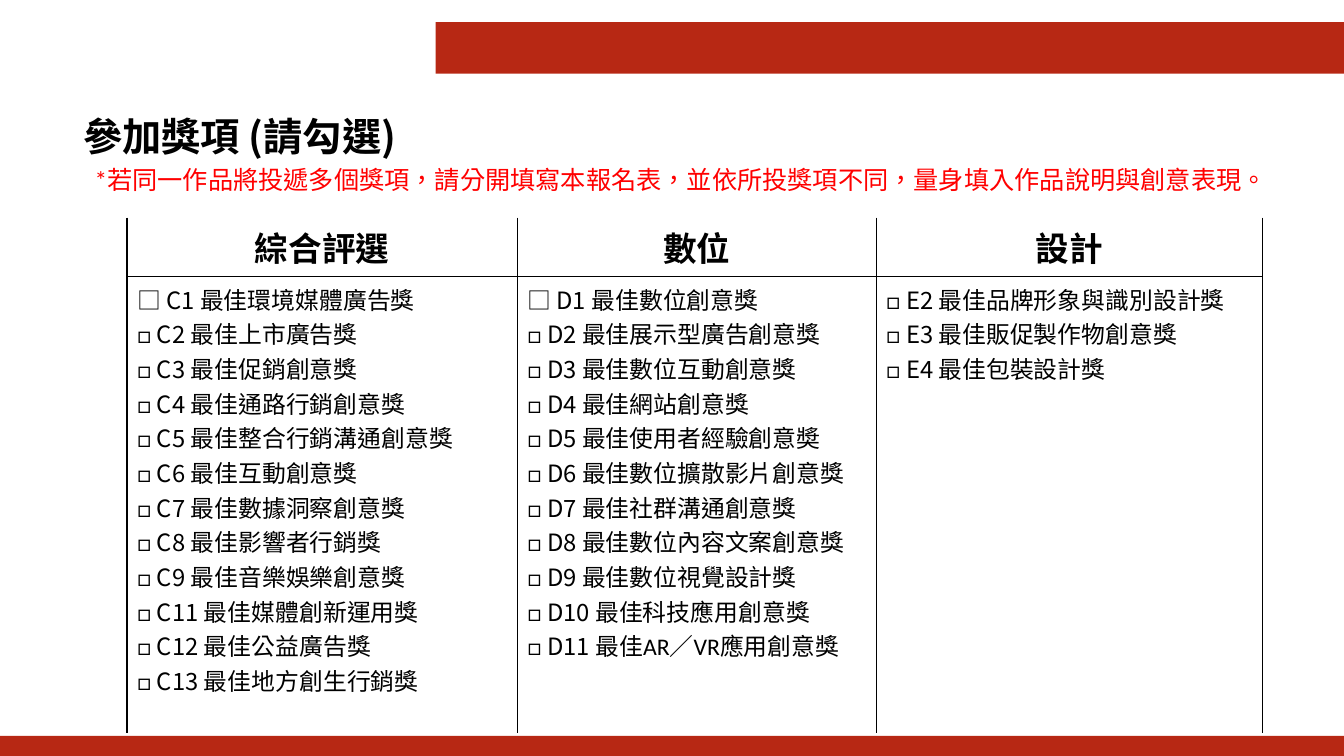
from dataclasses import dataclass

from lxml.etree import SubElement
from pptx import Presentation
from pptx.dml.color import RGBColor
from pptx.enum.lang import MSO_LANGUAGE_ID as Language
from pptx.enum.shapes import MSO_SHAPE as Shape
from pptx.enum.text import MSO_ANCHOR as Anchor, MSO_AUTO_SIZE as AutoSize, PP_ALIGN as Align
from pptx.oxml.ns import qn
from pptx.util import Pt

PX = 9144
NBSP = " "


@dataclass(frozen=True)
class Theme:
    """Colours, fonts and type sizes of the entry form."""
    bar: str = "B72814"
    ink: str = "000000"
    warning: str = "FF0000"
    text_font: str = "Calibri"
    code_font: str = "Noto Sans CJK SC"
    title: int = 28
    heading: int = 24
    note: int = 18
    award: int = 17
    rule: int = 1


THEME = Theme()

CATEGORIES = [
    ("綜合評選", 387, "C1", [
        ("C1", "最佳環境媒體廣告獎"),
        ("C2", "最佳上市廣告獎"),
        ("C3", "最佳促銷創意獎"),
        ("C4", "最佳通路行銷創意獎"),
        ("C5", "最佳整合行銷溝通創意獎"),
        ("C6", "最佳互動創意獎"),
        ("C7", "最佳數據洞察創意獎"),
        ("C8", "最佳影響者行銷獎"),
        ("C9", "最佳音樂娛樂創意獎"),
        ("C11", "最佳媒體創新運用獎"),
        ("C12", "最佳公益廣告獎"),
        ("C13", "最佳地方創生行銷獎"),
    ]),
    ("數位", 356, "D1", [
        ("D1", "最佳數位創意獎"),
        ("D2", "最佳展示型廣告創意獎"),
        ("D3", "最佳數位互動創意獎"),
        ("D4", "最佳網站創意獎"),
        ("D5", "最佳使用者經驗創意奬"),
        ("D6", "最佳數位擴散影片創意獎"),
        ("D7", "最佳社群溝通創意獎"),
        ("D8", "最佳數位內容文案創意獎"),
        ("D9", "最佳數位視覺設計獎"),
        ("D10", "最佳科技應用創意獎"),
        ("D11", "最佳AR／VR應用創意獎"),
    ]),
    ("設計", 383, None, [
        ("E2", "最佳品牌形象與識別設計獎"),
        ("E3", "最佳販促製作物創意獎"),
        ("E4", "最佳包裝設計獎"),
    ]),
]


def scaled(box):
    """Turn a box in px into EMU."""
    return [length * PX for length in box]


def add_span(para, text, size, font=THEME.text_font, color=THEME.ink, bold=False):
    """Add one run of text to a paragraph."""
    span = para.add_run()
    span.text = text
    span.font.name = font
    span.font.size = Pt(size)
    span.font.bold = bold
    span.font.color.rgb = RGBColor.from_string(color)
    span.font.language_id = Language.TRADITIONAL_CHINESE


def add_bar(page, box):
    """Draw one plain red bar."""
    bar = page.shapes.add_shape(Shape.RECTANGLE, *scaled(box))
    bar.shadow.inherit = False
    bar.fill.solid()
    bar.fill.fore_color.rgb = RGBColor.from_string(THEME.bar)
    bar.line.fill.background()


def add_text_line(page, box):
    """Add a text box and return its only paragraph."""
    frame = page.shapes.add_textbox(*scaled(box)).text_frame
    frame.word_wrap = True
    frame.auto_size = AutoSize.SHAPE_TO_FIT_TEXT
    return frame.paragraphs[0]


def add_title(page, box):
    """Write the bold page title."""
    para = add_text_line(page, box)
    for text, font in (
        ("參加獎項" + NBSP, THEME.text_font),
        ("(", THEME.code_font),
        ("請勾選", THEME.text_font),
        (")", THEME.code_font),
    ):
        add_span(para, text, THEME.title, font, bold=True)


def add_note(page, box):
    """Write the red instruction below the title."""
    text = "*若同一作品將投遞多個獎項，請分開填寫本報名表，並依所投獎項不同，量身填入作品說明與創意表現。"
    add_span(add_text_line(page, box), text, THEME.note, color=THEME.warning)


def set_borders(cell, ruled):
    """Rule the named sides of a cell and clear the others."""
    properties = cell._tc.get_or_add_tcPr()
    for side in "LRTB":
        line = SubElement(properties, qn(f"a:ln{side}"), w=str(Pt(THEME.rule)))
        if side in ruled:
            fill = SubElement(line, qn("a:solidFill"))
            SubElement(fill, qn("a:srgbClr"), val=THEME.ink)
        else:
            SubElement(line, qn("a:noFill"))


def fill_heading(cell, heading):
    """Write a category name in its heading cell."""
    set_borders(cell, "LRB")
    cell.fill.background()
    cell.vertical_anchor = Anchor.MIDDLE
    para = cell.text_frame.paragraphs[0]
    para.alignment = Align.CENTER
    add_span(para, heading, THEME.heading, bold=True)


def fill_awards(cell, awards, wide_box):
    """List the awards of a category, each with its tick box."""
    set_borders(cell, "LRT")
    cell.fill.background()
    frame = cell.text_frame
    for index, (code, award) in enumerate(awards):
        para = frame.add_paragraph() if index else frame.paragraphs[0]
        if code == wide_box:
            add_span(para, f"□ {code}{NBSP}", THEME.award, THEME.code_font)
        else:
            add_span(para, "□" + NBSP, THEME.award)
            add_span(para, code + NBSP, THEME.award, THEME.code_font)
        add_span(para, award, THEME.award)


def add_award_table(page, box, heading_height):
    """Build the table with one column for each category."""
    table = page.shapes.add_table(2, len(CATEGORIES), *scaled(box)).table
    table.first_row = False
    table.horz_banding = False
    table.rows[0].height = heading_height * PX
    table.rows[1].height = (box[3] - heading_height) * PX
    for column, (heading, width, wide_box, awards) in enumerate(CATEGORIES):
        table.columns[column].width = width * PX
        fill_heading(table.cell(0, column), heading)
        fill_awards(table.cell(1, column), awards, wide_box)


def main():
    """Build the award selection page."""
    deck = Presentation()
    deck.slide_width, deck.slide_height = scaled((1333, 750))
    page = deck.slides.add_slide(deck.slide_layouts[6])
    add_bar(page, (432, 22, 901, 51))
    add_bar(page, (0, 730, 1333, 20))
    add_award_table(page, (126, 216, 1126, 511), 58)
    add_title(page, (73, 107, 837, 57))
    add_note(page, (84, 158, 1218, 40))
    deck.save("out.pptx")


if __name__ == "__main__":
    main()
